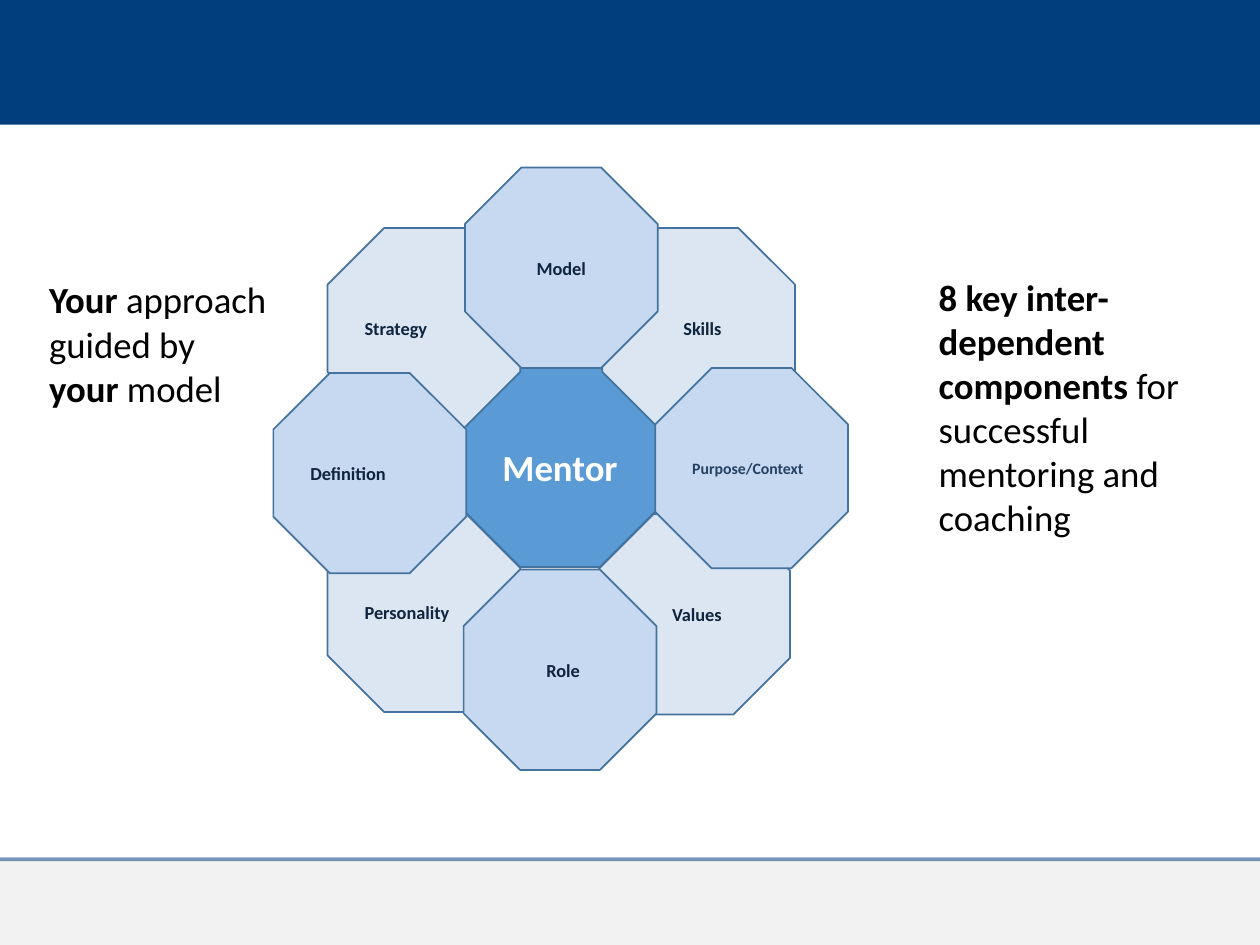
from dataclasses import dataclass

import lxml.etree
import pptx
import pptx.dml.color
import pptx.enum.shapes
import pptx.enum.text
import pptx.oxml.ns
import pptx.util

Inches = pptx.util.Inches
ALIGN = pptx.enum.text.PP_ALIGN
ANCHOR = pptx.enum.text.MSO_ANCHOR
SHAPE = pptx.enum.shapes.MSO_SHAPE
NBSP = chr(160)  # keeps word pairs on one line


@dataclass(frozen=True)
class Theme:
    font: str = "Calibri"
    navy: str = "003E7E"
    grey: str = "808080"
    black: str = "000000"
    white: str = "FFFFFF"
    outline: str = "43739E"
    hub: str = "5B9BD5"
    pale: str = "DCE6F2"
    soft: str = "C6D9F1"
    ink: str = "0F243E"
    ink_light: str = "254061"
    large: float = 21
    label: float = 10.5
    small: float = 9


THEME = Theme()


@dataclass(frozen=True)
class Petal:
    text: str
    left: float
    top: float
    fill: str
    color: str = THEME.ink
    size: float = THEME.label
    align: ALIGN = ALIGN.LEFT
    indent: float = 0


PETAL_W, PETAL_H = 1.53, 1.59
PETALS = [
    # Centre
    Petal("Mentor", 3.68, 2.91, THEME.hub, THEME.white, THEME.large, ALIGN.CENTER),
    # Diagonal petals, behind
    Petal("Personality", 2.6, 4.06, THEME.pale),
    Petal("Strategy", 2.6, 1.81, THEME.pale),
    Petal("Values", 4.74, 4.08, THEME.pale, indent=0.3),
    Petal("Skills", 4.78, 1.81, THEME.pale, indent=0.35),
    # Upright petals, in front
    Petal("Role", 3.68, 4.52, THEME.soft, align=ALIGN.CENTER, indent=0.05),
    Petal("Purpose/Context", 5.2, 2.92, THEME.soft, THEME.ink_light, THEME.small),
    Petal("Model", 3.69, 1.33, THEME.soft, align=ALIGN.CENTER),
    Petal("Definition", 2.17, 2.96, THEME.soft),
]


def rgb(value: str) -> pptx.dml.color.RGBColor:
    return pptx.dml.color.RGBColor.from_string(value)


def set_alpha(sp, percent: int) -> None:
    """Make the first colour of a shape or line translucent."""
    qn = pptx.oxml.ns.qn
    clr = next(sp._element.spPr.iter(qn("a:srgbClr")))
    lxml.etree.SubElement(clr, qn("a:alpha"), val=str(percent * 1000))


def add_shape(s, kind: SHAPE, left: float, top: float, width: float,
              height: float, fill: str):
    sp = s.shapes.add_shape(kind, Inches(left), Inches(top),
                            Inches(width), Inches(height))
    sp.shadow.inherit = False
    sp.fill.solid()
    sp.fill.fore_color.rgb = rgb(fill)
    sp.line.fill.background()
    return sp


def write(tf, *runs: tuple[str, bool], size: float, color: str,
          align: ALIGN = ALIGN.LEFT, anchor: ANCHOR = ANCHOR.TOP,
          indent: float = 0) -> None:
    """Fill a text frame with one paragraph of (text, bold) runs."""
    tf.word_wrap = True
    tf.vertical_anchor = anchor
    tf.margin_left = Inches(0.07 + indent)
    tf.margin_right = Inches(0.07)
    tf.margin_top = tf.margin_bottom = Inches(0.04)
    p = tf.paragraphs[0]
    p.alignment = align
    for text, bold in runs:
        r = p.add_run()
        r.text = text
        r.font.name = THEME.font
        r.font.size = pptx.util.Pt(size)
        r.font.bold = bold
        r.font.color.rgb = rgb(color)


def add_petal(s, petal: Petal) -> None:
    sp = add_shape(s, SHAPE.OCTAGON, petal.left, petal.top,
                   PETAL_W, PETAL_H, petal.fill)
    sp.line.color.rgb = rgb(THEME.outline)
    sp.line.width = pptx.util.Pt(1)
    write(sp.text_frame, (petal.text, True), size=petal.size, color=petal.color,
          align=petal.align, anchor=ANCHOR.MIDDLE, indent=petal.indent)


def add_note(s, left: float, top: float, *runs: tuple[str, bool]) -> None:
    sp = s.shapes.add_textbox(Inches(left), Inches(top), Inches(2.07), Inches(2.42))
    write(sp.text_frame, *runs, size=THEME.large, color=THEME.black)


def add_frame(s) -> None:
    """Header band, footer band and the rule above the footer."""
    add_shape(s, SHAPE.RECTANGLE, 0, 0, 10, 0.99, THEME.navy)
    footer = add_shape(s, SHAPE.RECTANGLE, 0, 6.82, 10, 0.68, THEME.grey)
    set_alpha(footer, 10)
    rule = s.shapes.add_connector(pptx.enum.shapes.MSO_CONNECTOR.STRAIGHT,
                                  0, Inches(6.82), Inches(10), Inches(6.82))
    rule.line.color.rgb = rgb(THEME.navy)
    rule.line.width = pptx.util.Pt(2.25)
    set_alpha(rule, 52)
    lxml.etree.SubElement(rule._element.spPr, pptx.oxml.ns.qn("a:effectLst"))


def main() -> None:
    prs = pptx.Presentation()
    prs.slide_width, prs.slide_height = Inches(10), Inches(7.5)
    s = prs.slides.add_slide(prs.slide_layouts[6])
    add_frame(s)

    # Flower of components
    for petal in PETALS:
        add_petal(s, petal)

    # Side notes
    add_note(s, 0.32, 2.16, ("Your", True),
             (f"{NBSP}approach guided{NBSP}by ", False),
             ("your", True), (f"{NBSP}model", False))
    add_note(s, 7.38, 2.14, ("8 key inter-dependent components", True),
             (" for successful mentoring and coaching", False))
    prs.save("out.pptx")


if __name__ == "__main__":
    main()
